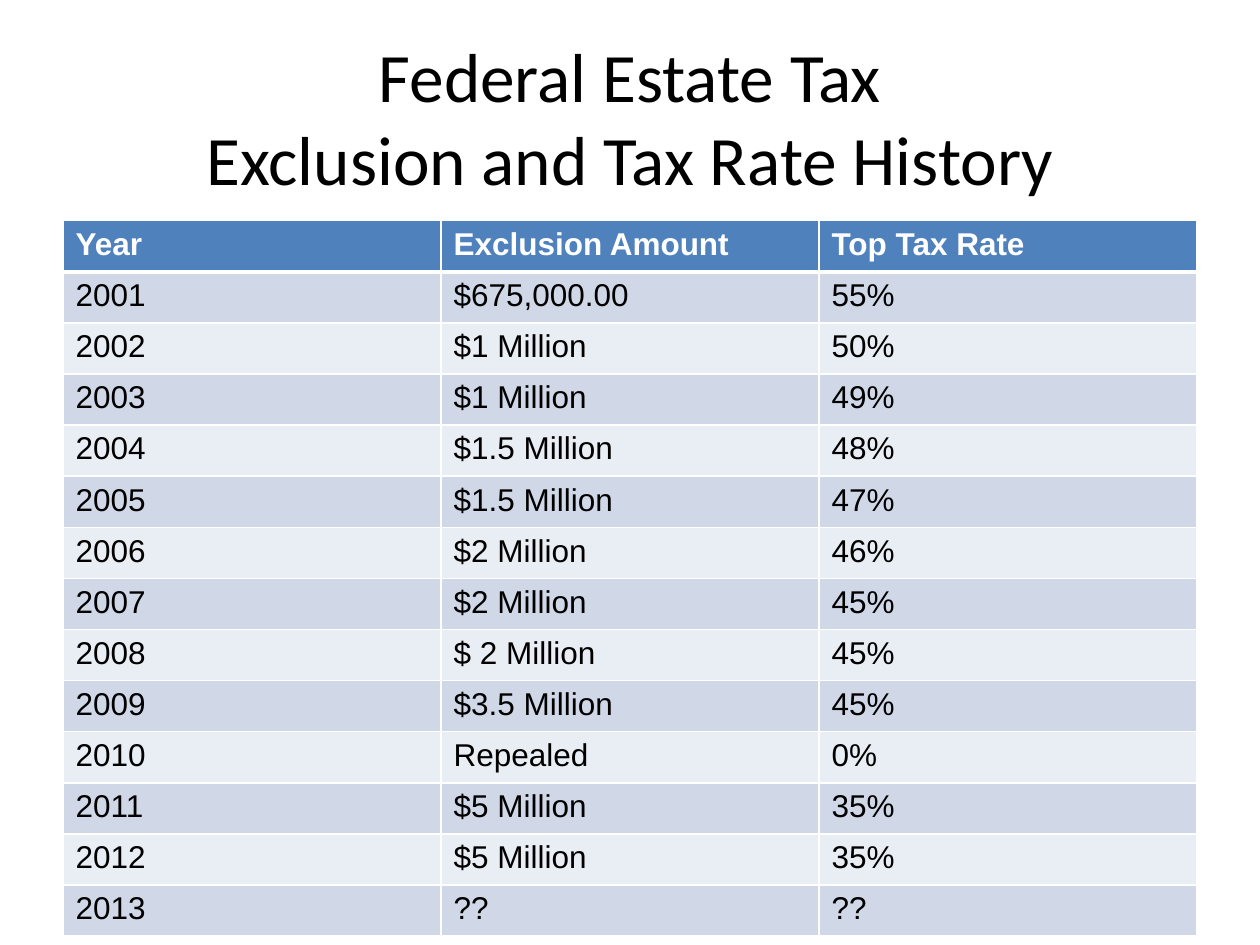
from dataclasses import dataclass

from lxml.etree import SubElement
from pptx import Presentation
from pptx.dml.color import RGBColor
from pptx.enum.text import MSO_ANCHOR as Anchor, MSO_AUTO_SIZE as AutoSize, PP_ALIGN as Align
from pptx.oxml.ns import qn
from pptx.slide import Slide
from pptx.table import _Cell as Cell
from pptx.text.text import _Paragraph as Paragraph
from pptx.util import Cm, Pt

BLACK = RGBColor(0x00, 0x00, 0x00)
WHITE = RGBColor(0xFF, 0xFF, 0xFF)
HEADER_BLUE = RGBColor(0x4F, 0x81, 0xBD)
BAND_DARK = RGBColor(0xD0, 0xD8, 0xE8)
BAND_LIGHT = RGBColor(0xE9, 0xED, 0xF4)

LEFT = Cm(1.27)
COLUMN_WIDTH = Cm(7.62)
ROW_HEIGHT = Cm(1.03)


@dataclass(frozen=True)
class TaxYear:
    year: str
    exclusion: str
    rate: str


@dataclass(frozen=True)
class RowStyle:
    fill: RGBColor
    color: RGBColor
    bold: bool = False
    top: float = 1
    bottom: float = 1


HEADER = TaxYear("Year", "Exclusion Amount", "Top Tax Rate")
HISTORY = [
    TaxYear("2001", "$675,000.00", "55%"),
    TaxYear("2002", "$1 Million", "50%"),
    TaxYear("2003", "$1 Million", "49%"),
    TaxYear("2004", "$1.5 Million", "48%"),
    TaxYear("2005", "$1.5 Million", "47%"),
    TaxYear("2006", "$2 Million", "46%"),
    TaxYear("2007", "$2 Million", "45%"),
    TaxYear("2008", "$ 2 Million", "45%"),
    TaxYear("2009", "$3.5 Million", "45%"),
    TaxYear("2010", "Repealed", "0%"),
    TaxYear("2011", "$5 Million", "35%"),
    TaxYear("2012", "$5 Million", "35%"),
    TaxYear("2013", "??", "??"),
]


def row_style(index: int) -> RowStyle:
    if index == 0:
        return RowStyle(HEADER_BLUE, WHITE, bold=True, bottom=3)
    fill = BAND_DARK if index % 2 else BAND_LIGHT
    return RowStyle(fill, BLACK, top=3 if index == 1 else 1)


def add_run(p: Paragraph, text: str, font: str, size: float,
            color: RGBColor, bold: bool = False) -> None:
    r = p.add_run()
    r.text = text
    r.font.name = font
    r.font.size = Pt(size)
    r.font.bold = bold
    r.font.color.rgb = color


def add_borders(cell: Cell, style: RowStyle) -> None:
    tc_pr = cell._tc.get_or_add_tcPr()
    widths = {"a:lnL": 1, "a:lnR": 1, "a:lnT": style.top, "a:lnB": style.bottom}
    for tag, width in widths.items():
        ln = SubElement(tc_pr, qn(tag), w=str(Pt(width)))
        fill = SubElement(ln, qn("a:solidFill"))
        SubElement(fill, qn("a:srgbClr"), val=str(WHITE))


def draw_cell(cell: Cell, text: str, style: RowStyle) -> None:
    add_borders(cell, style)
    cell.fill.solid()
    cell.fill.fore_color.rgb = style.fill
    add_run(cell.text_frame.paragraphs[0], text, "Arial", 18, style.color, style.bold)


def draw_title(s: Slide, lines: list[str]) -> None:
    sp = s.shapes.title
    sp.left, sp.top, sp.width, sp.height = LEFT, Cm(0.76), Cm(22.86), Cm(3.18)
    tf = sp.text_frame
    tf.word_wrap = True
    tf.auto_size = AutoSize.NONE
    tf.vertical_anchor = Anchor.MIDDLE
    p = tf.paragraphs[0]
    p.alignment = Align.CENTER
    for i, line in enumerate(lines):
        if i:
            p.add_line_break()
        add_run(p, line, "Calibri", 39.6, BLACK)


def draw_history(s: Slide, records: list[TaxYear]) -> None:
    table = s.shapes.add_table(len(records), 3, LEFT, Cm(4.45),
                               COLUMN_WIDTH * 3, ROW_HEIGHT * len(records)).table
    for column in table.columns:
        column.width = COLUMN_WIDTH
    for i, record in enumerate(records):
        table.rows[i].height = ROW_HEIGHT
        for j, text in enumerate((record.year, record.exclusion, record.rate)):
            draw_cell(table.cell(i, j), text, row_style(i))


def main() -> None:
    prs = Presentation()
    prs.slide_width, prs.slide_height = Cm(25.4), Cm(19.05)
    s = prs.slides.add_slide(prs.slide_layouts[5])
    draw_title(s, ["Federal Estate Tax", "Exclusion and Tax Rate History"])
    draw_history(s, [HEADER, *HISTORY])
    prs.save("out.pptx")


if __name__ == "__main__":
    main()
